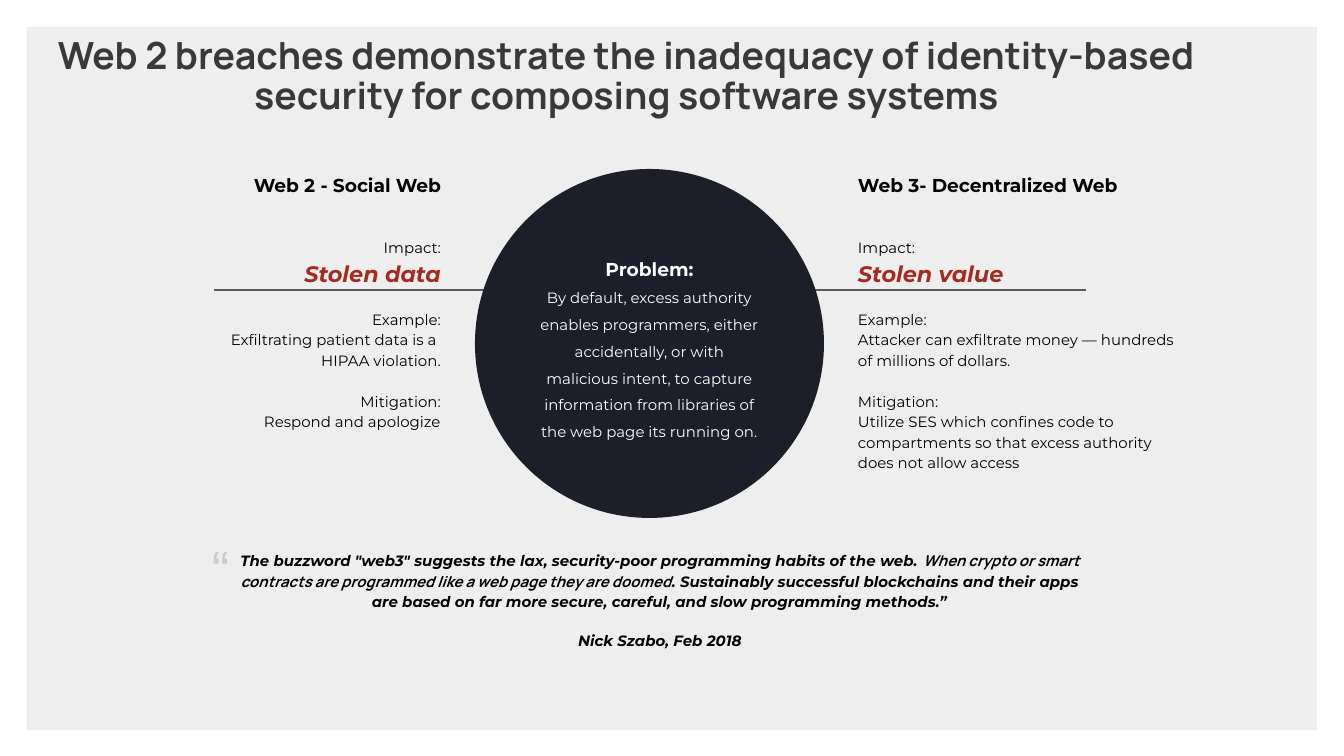
from dataclasses import dataclass

from lxml import etree
from pptx import Presentation
from pptx.dml.color import RGBColor
from pptx.enum.shapes import MSO_CONNECTOR, MSO_SHAPE
from pptx.enum.text import MSO_ANCHOR, PP_ALIGN
from pptx.oxml.ns import qn
from pptx.util import Pt

LEFT, CENTER, RIGHT = PP_ALIGN.LEFT, PP_ALIGN.CENTER, PP_ALIGN.RIGHT
TOP, MIDDLE = MSO_ANCHOR.TOP, MSO_ANCHOR.MIDDLE
RECTANGLE, OVAL = MSO_SHAPE.RECTANGLE, MSO_SHAPE.OVAL
STRAIGHT = MSO_CONNECTOR.STRAIGHT

WIDTH, HEIGHT = 1344, 756
EMU_PER_PX = 9144000 / WIDTH
PAD = 13


def px(length):
    return round(length * EMU_PER_PX)


@dataclass(frozen=True)
class Theme:
    panel: str = "EEEEEE"
    rule: str = "595959"
    dark: str = "1C1F2A"
    title: str = "373A36"
    ink: str = "000000"
    light: str = "FFFFFF"
    alert: str = "A72A1E"
    faint: str = "CCCCCC"
    body_font: str = "Montserrat"
    title_font: str = "Manrope"
    mark_font: str = "Arial"
    body_size: int = 8
    heading_size: int = 10
    impact_size: int = 12
    title_size: int = 20
    mark_size: int = 28


@dataclass(frozen=True)
class Run:
    text: str
    size: int
    color: str
    font: str
    bold: bool = False
    italic: bool = False


@dataclass(frozen=True)
class Para:
    runs: tuple
    spacing: float = 1.15
    before: int = 0


class SlideBuilder:
    def __init__(self, slide, theme):
        self.shapes = slide.shapes
        self.theme = theme

    def run(self, text, size=None, color=None, font=None, **style):
        """Describe a run, falling back to the theme's body style."""
        theme = self.theme
        return Run(text, size or theme.body_size, color or theme.ink,
                   font or theme.body_font, **style)

    def fill_frame(self, frame, paras, align, insets, anchor=TOP):
        frame.word_wrap = True
        frame.vertical_anchor = anchor
        (frame.margin_left, frame.margin_top,
         frame.margin_right, frame.margin_bottom) = map(px, insets)
        for index, para in enumerate(paras):
            paragraph = frame.add_paragraph() if index else frame.paragraphs[0]
            paragraph.alignment = align
            paragraph.line_spacing = para.spacing
            paragraph.space_before = Pt(para.before)
            for part in para.runs:
                run = paragraph.add_run()
                run.text = part.text
                font = run.font
                font.name, font.size = part.font, Pt(part.size)
                font.bold, font.italic = part.bold, part.italic
                font.color.rgb = RGBColor.from_string(part.color)

    def text(self, box, paras, align=LEFT, insets=(PAD,) * 4):
        frame = self.shapes.add_textbox(*map(px, box)).text_frame
        self.fill_frame(frame, paras, align, insets)

    def filled(self, kind, box, color):
        shape = self.shapes.add_shape(kind, *map(px, box))
        shape.shadow.inherit = False
        shape.fill.solid()
        shape.fill.fore_color.rgb = RGBColor.from_string(color)
        shape.line.fill.background()
        return shape

    def rule(self, x1, x2, y):
        line = self.shapes.add_connector(STRAIGHT, px(x1), px(y), px(x2), px(y))
        line.line.color.rgb = RGBColor.from_string(self.theme.rule)
        line.line.width = Pt(0.75)
        etree.SubElement(line._element.spPr, qn("a:effectLst"))

    def web_column(self, left, align, heading, impact, example, mitigation):
        theme = self.theme
        paras = [
            Para((self.run(heading, theme.heading_size, bold=True),), spacing=1),
            Para((self.run("Impact:"),), before=21),
            Para((self.run(impact, theme.impact_size, theme.alert,
                           bold=True, italic=True),)),
        ]
        for label, lines in (("Example:", example), ("Mitigation:", mitigation)):
            paras.append(Para((self.run(label),), before=11))
            paras += [Para((self.run(line),)) for line in lines]
        self.text((left, 161, 349, 335), paras, align)


def main():
    deck = Presentation()
    deck.slide_width, deck.slide_height = px(WIDTH), px(HEIGHT)
    theme = Theme()
    page = SlideBuilder(deck.slides.add_slide(deck.slide_layouts[6]), theme)

    page.filled(RECTANGLE, (27, 27, 1290, 703), theme.panel)
    page.rule(214, 1086, 290)

    strong = {"bold": True, "italic": True}
    quote = (
        page.run('The buzzword "web3" suggests the lax, security-poor '
                 "programming habits of the web. ", **strong),
        page.run("When crypto or smart contracts are programmed like a web page "
                 "they are doomed", font=theme.title_font, **strong),
        page.run(". Sustainably successful blockchains and their apps are based on "
                 "far more secure, careful, and slow programming methods.”", **strong),
    )
    speaker = page.run("Nick Szabo, Feb 2018", **strong)
    page.text((196, 536, 907, 128), [Para(quote), Para((speaker,), before=10)],
              CENTER, insets=(34, PAD, PAD, PAD))

    title = page.run("Web 2 breaches demonstrate the inadequacy of identity-based "
                     "security for composing software systems",
                     theme.title_size, theme.title, theme.title_font, bold=True)
    page.text((0, 24, 1253, 85), [Para((title,), spacing=0.9)], CENTER)

    problem = page.run("Problem:", theme.heading_size, theme.light, bold=True)
    cause = page.run("By default, excess authority enables programmers, either "
                     "accidentally, or with malicious intent, to capture information "
                     "from libraries of the web page its running on.",
                     color=theme.light)
    circle = page.filled(OVAL, (475, 169, 349, 349), theme.dark)
    page.fill_frame(circle.text_frame,
                    [Para((part,), spacing=1.5) for part in (problem, cause)],
                    CENTER, (PAD,) * 4, MIDDLE)

    page.web_column(
        845, LEFT, "Web 3- Decentralized Web", "Stolen value",
        ["Attacker can exfiltrate money — hundreds of millions of dollars."],
        ["Utilize SES which confines code to compartments so that excess "
         "authority does not allow access"])
    page.web_column(
        105, RIGHT, "Web 2 - Social Web", "Stolen data",
        ["Exfiltrating patient data is a ", "HIPAA violation."],
        ["Respond and apologize"])

    quote_mark = page.run("“", theme.mark_size, theme.faint, theme.mark_font)
    page.text((212, 536, 24, 27), [Para((quote_mark,), spacing=1)],
              insets=(0, 0, 0, 0))

    deck.save("out.pptx")


if __name__ == "__main__":
    main()
